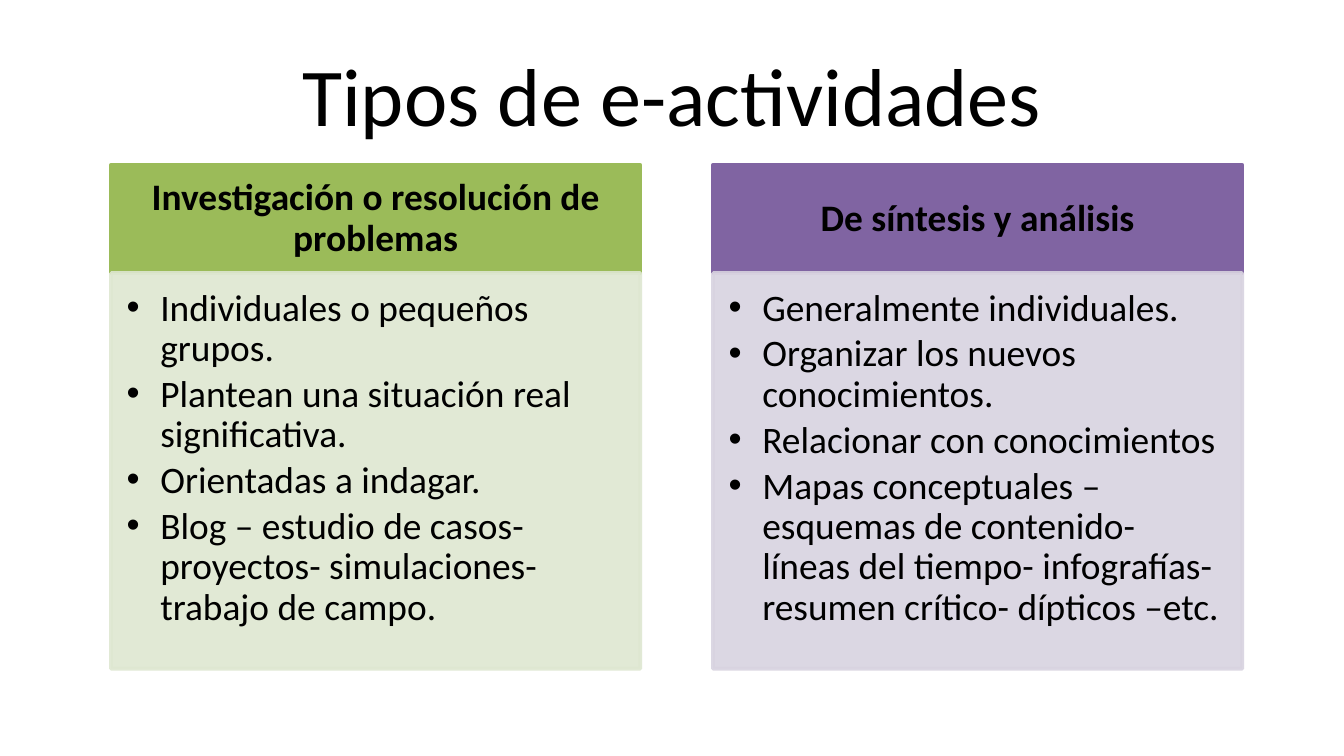
import pptx
import pptx.util
import pptx.dml.color
import pptx.enum.text
import pptx.oxml.ns
import lxml.etree

Pt = pptx.util.Pt
RGB = pptx.dml.color.RGBColor.from_string
qn = pptx.oxml.ns.qn
ALIGN = pptx.enum.text.PP_ALIGN
ANCHOR = pptx.enum.text.MSO_ANCHOR

TITLE = "Tipos de e-actividades"
COLUMNS = [
    {"head": "Investigación o resolución de problemas",
     "items": ["Individuales o pequeños grupos.",
               "Plantean una situación real significativa.",
               "Orientadas a indagar.",
               "Blog – estudio de casos- proyectos- simulaciones- trabajo de campo."],
     "colors": ("9BBB59", "DEE7D1")},
    {"head": "De síntesis y análisis",
     "items": ["Generalmente individuales.",
               "Organizar los nuevos conocimientos.",
               "Relacionar con conocimientos",
               "Mapas conceptuales – esquemas de contenido- líneas del tiempo- "
               "infografías- resumen crítico- dípticos –etc."],
     "colors": ("8064A2", "D8D3E0")},
]

THEME = {"font": "Calibri", "text": "000000", "title": 44, "body": 20,
         "line": 2, "body_alpha": 90}

LEFT, TOP, COL_W, GAP = 59.5, 88.3, 283.5, 39
HEAD_H, BODY_H = 58, 212

TITLE_PARA = {"alignment": ALIGN.CENTER}
HEAD_PARA = {"alignment": ALIGN.CENTER, "line_spacing": 0.9,
             "space_before": Pt(0), "space_after": Pt(7)}
ITEM_PARA = {"level": 1, "alignment": ALIGN.LEFT, "line_spacing": 0.9,
             "space_before": Pt(0), "space_after": Pt(3)}
HEAD_INSETS = (11.2, 6.4, 11.2, 6.4)
BODY_INSETS = (8.4, 8.4, 11.2, 12.6)


def apply(obj, values):
    for name, value in values.items():
        setattr(obj, name, value)


def place(sp, x, y, w, h):
    apply(sp, {"left": Pt(x), "top": Pt(y), "width": Pt(w), "height": Pt(h)})


def paint(sp, color, alpha=100):
    sp.fill.solid()
    sp.fill.fore_color.rgb = RGB(color)
    sp.line.color.rgb = RGB(color)
    sp.line.width = Pt(THEME["line"])
    if alpha < 100:
        for clr in sp._element.spPr.iter(qn("a:srgbClr")):
            lxml.etree.SubElement(clr, qn("a:alpha"), val=str(alpha * 1000))


def add_bullet(p):
    pPr = p._p.get_or_add_pPr()
    pPr.set("marL", str(Pt(18)))
    pPr.set("indent", str(-Pt(18)))
    lxml.etree.SubElement(pPr, qn("a:buFont"), typeface="Arial")
    lxml.etree.SubElement(pPr, qn("a:buChar"), char="•")


def write(sp, lines, para, size, anchor, insets, bold=False, bullet=False):
    tf = sp.text_frame
    apply(tf, {"word_wrap": True, "vertical_anchor": anchor,
               "auto_size": pptx.enum.text.MSO_AUTO_SIZE.NONE})
    sides = ("margin_left", "margin_top", "margin_right", "margin_bottom")
    apply(tf, {side: Pt(v) for side, v in zip(sides, insets)})
    for i, line in enumerate(lines):
        p = tf.add_paragraph() if i else tf.paragraphs[0]
        if bullet:
            add_bullet(p)
        apply(p, para)
        r = p.add_run()
        r.text = line
        apply(r.font, {"name": THEME["font"], "size": Pt(size), "bold": bold})
        r.font.color.rgb = RGB(THEME["text"])


prs = pptx.Presentation()
prs.slide_width, prs.slide_height = Pt(720), Pt(405)
s = prs.slides.add_slide(prs.slide_layouts.get_by_name("Comparison"))
title, *boxes = s.placeholders

place(title, 36, 16.4, 648, 67.5)
write(title, [TITLE], TITLE_PARA, THEME["title"], ANCHOR.MIDDLE, (7.2, 3.6, 7.2, 3.6))

for i, col in enumerate(COLUMNS):
    head, body = boxes[2 * i:2 * i + 2]
    x = LEFT + i * (COL_W + GAP)
    head_color, body_color = col["colors"]
    place(head, x, TOP, COL_W, HEAD_H)
    paint(head, head_color)
    write(head, [col["head"]], HEAD_PARA, THEME["body"], ANCHOR.MIDDLE,
          HEAD_INSETS, bold=True)
    place(body, x, TOP + HEAD_H, COL_W, BODY_H)
    paint(body, body_color, THEME["body_alpha"])
    write(body, col["items"], ITEM_PARA, THEME["body"], ANCHOR.TOP,
          BODY_INSETS, bullet=True)

prs.save("out.pptx")
